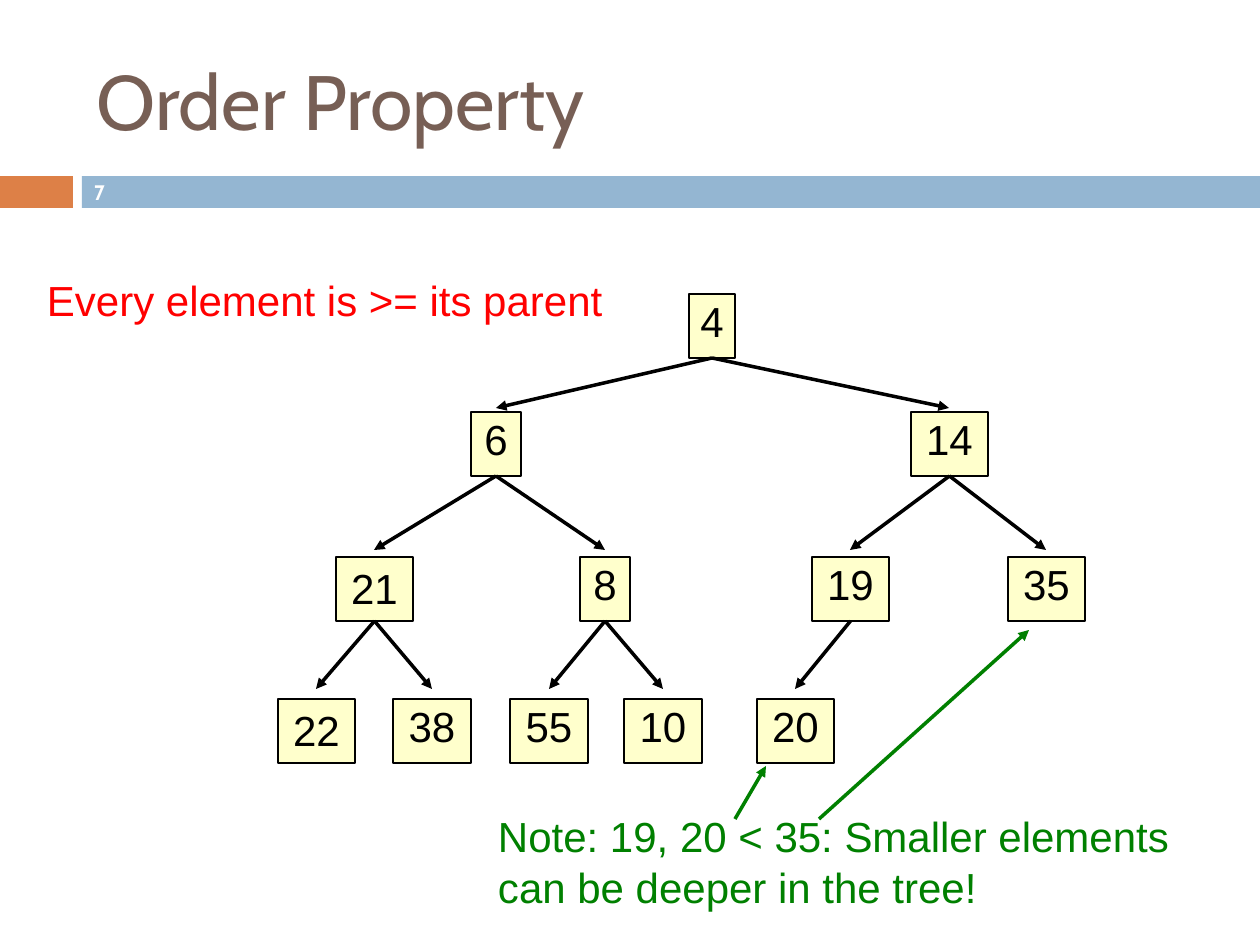
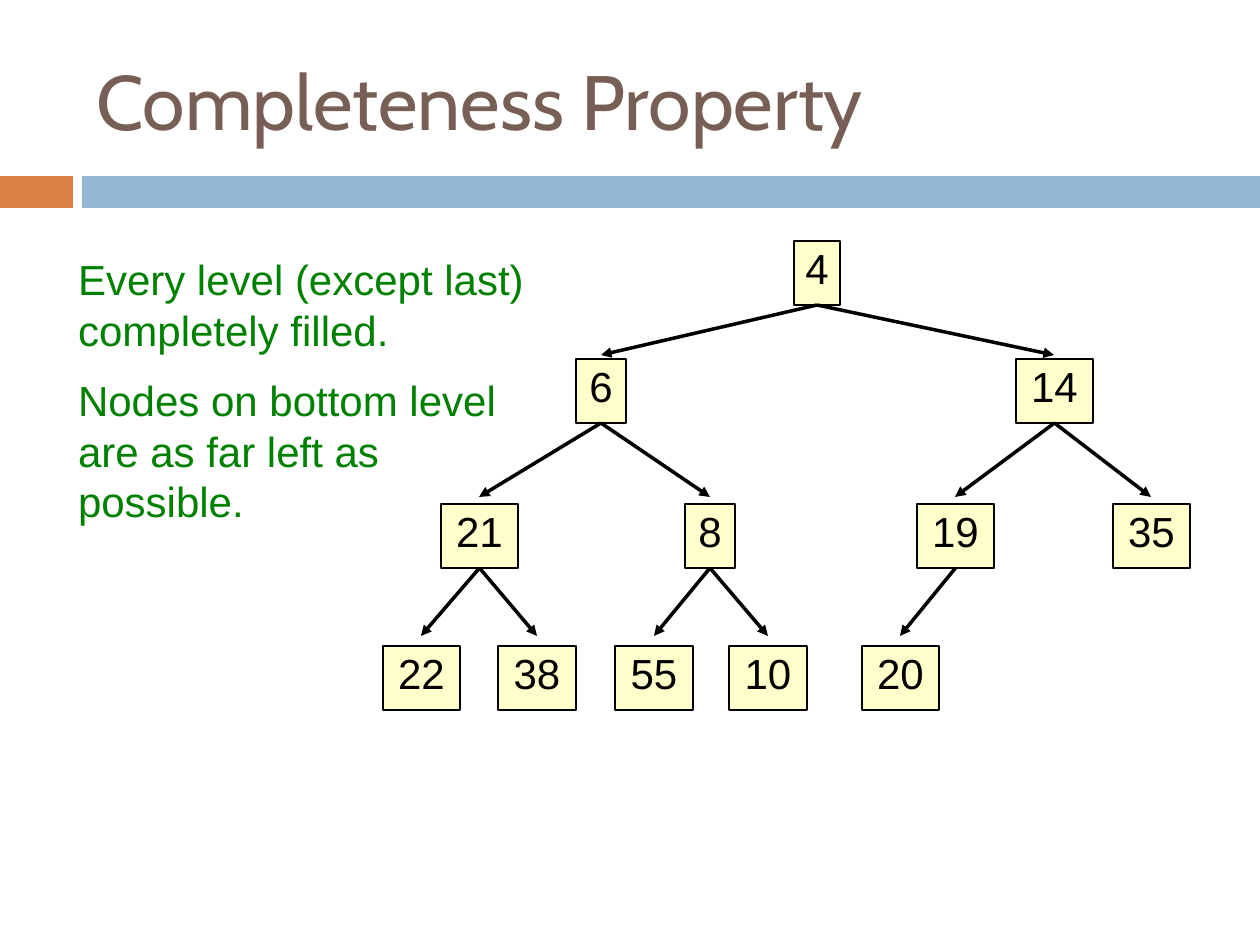
from lxml import etree
from pptx import Presentation
from pptx.dml.color import RGBColor
from pptx.enum.shapes import MSO_CONNECTOR, MSO_SHAPE
from pptx.enum.text import MSO_ANCHOR, MSO_AUTO_SIZE, PP_ALIGN
from pptx.oxml.ns import qn
from pptx.util import Inches, Pt

RECTANGLE = MSO_SHAPE.RECTANGLE
STRAIGHT = MSO_CONNECTOR.STRAIGHT
TOP, MIDDLE = MSO_ANCHOR.TOP, MSO_ANCHOR.MIDDLE
LEFT, CENTER = PP_ALIGN.LEFT, PP_ALIGN.CENTER
NO_AUTOFIT = MSO_AUTO_SIZE.NONE
BOTTOM_SITE = 2

BLACK = RGBColor(0x00, 0x00, 0x00)
WHITE = RGBColor(0xFF, 0xFF, 0xFF)
RED = RGBColor(0xFF, 0x00, 0x00)
GREEN = RGBColor(0x00, 0x80, 0x00)
CREAM = RGBColor(0xFF, 0xFF, 0xCC)
BROWN = RGBColor(0x77, 0x5F, 0x55)
ORANGE = RGBColor(0xDD, 0x80, 0x47)
BLUE = RGBColor(0x94, 0xB6, 0xD2)

PX_PER_INCH = 126
BODY_FONT, TITLE_FONT = "Arial", "Cabin"

# Tree levels: top of the nodes, and where arrows into them stop
NODE_TOPS = (294, 412, 557, 699)
ARROW_ENDS = (None, 408, 550, 689)
NODE_HEIGHT = 64

# Label: (level, left, width, parent)
TREE = {
    "4": (0, 689, 46, None),
    "6": (1, 471, 50, "4"),
    "14": (1, 911, 77, "4"),
    "21": (2, 336, 77, "6"),
    "8": (2, 580, 50, "6"),
    "19": (2, 812, 77, "14"),
    "35": (2, 1008, 77, "14"),
    "22": (3, 278, 77, "21"),
    "38": (3, 393, 78, "21"),
    "55": (3, 510, 78, "8"),
    "10": (3, 624, 78, "8"),
    "20": (3, 757, 77, "19"),
}


def emu(px):
    return round(px * Inches(1) / PX_PER_INCH)


class TreeDeck:
    """Holds the shared style and the current slide."""

    def __init__(self):
        self.deck = Presentation()
        self.deck.slide_width, self.deck.slide_height = Inches(10), Inches(7.5)
        self.page = None

    def start_page(self, title):
        self.page = self.deck.slides.add_slide(self.deck.slide_layouts[5])
        self.rectangle(0, 176, 73, 32, ORANGE)
        self.rectangle(82, 176, 1178, 32, BLUE)
        box = self.page.shapes.title
        box.left, box.top, box.width, box.height = map(emu, (84, 32, 1124, 136))
        frame = box.text_frame
        frame.auto_size = NO_AUTOFIT
        frame.vertical_anchor = MIDDLE
        frame.text = title
        self.format(frame.paragraphs[0], 44, BROWN, TITLE_FONT)

    def format(self, para, size, color, name=BODY_FONT, align=LEFT, bold=False):
        para.alignment = align
        font = para.font
        font.size, font.name, font.bold = Pt(size), name, bold
        font.color.rgb = color

    def body_text(self, frame, paragraphs, color, align=LEFT, inset_top=2):
        frame.word_wrap = True
        frame.vertical_anchor = TOP
        frame.margin_left = frame.margin_right = emu(5)
        frame.margin_top, frame.margin_bottom = emu(inset_top), 0
        for index, text in enumerate(paragraphs):
            para = frame.add_paragraph() if index else frame.paragraphs[0]
            para.text = text
            para.line_spacing = Pt(28.8)
            if index:
                para.space_before = Pt(11.5)
            self.format(para, 24, color, align=align)

    def rectangle(self, left, top, width, height, fill, line=None):
        box = self.page.shapes.add_shape(
            RECTANGLE, *map(emu, (left, top, width, height)))
        box.shadow.inherit = False
        box.fill.solid()
        box.fill.fore_color.rgb = fill
        if line is None:
            box.line.fill.background()
        else:
            box.line.color.rgb = line
            box.line.width = Pt(1)
        return box

    def text(self, left, top, width, height, paragraphs, color):
        box = self.page.shapes.add_textbox(*map(emu, (left, top, width, height)))
        self.body_text(box.text_frame, paragraphs, color)

    def page_number(self, number):
        box = self.page.shapes.add_textbox(*map(emu, (63, 175, 73, 34)))
        frame = box.text_frame
        frame.word_wrap = True
        frame.vertical_anchor = MIDDLE
        frame.text = number
        self.format(frame.paragraphs[0], 12, WHITE, TITLE_FONT, CENTER, True)

    def arrow(self, start_x, start_y, end_x, end_y, color, parent=None):
        line = self.page.shapes.add_connector(
            STRAIGHT, *map(emu, (start_x, start_y, end_x, end_y)))
        if parent is not None:
            line.begin_connect(parent, BOTTOM_SITE)
        line.line.color.rgb = color
        line.line.width = Pt(2)
        outline = line.line._get_or_add_ln()
        etree.SubElement(outline, qn("a:tailEnd"), type="triangle")
        etree.SubElement(line._element.spPr, qn("a:effectLst"))

    def tree(self, shift_x=0, shift_y=0, lowered=()):
        boxes = {}
        for label, (level, left, width, _) in TREE.items():
            box = self.rectangle(left + shift_x, NODE_TOPS[level] + shift_y,
                                 width, NODE_HEIGHT, CREAM, BLACK)
            self.body_text(box.text_frame, [label], BLACK, CENTER,
                           6 if label in lowered else 2)
            boxes[label] = box
        for level, left, width, parent in TREE.values():
            if parent is None:
                continue
            parent_level, parent_left, parent_width, _ = TREE[parent]
            self.arrow(parent_left + parent_width // 2 + shift_x,
                       NODE_TOPS[parent_level] + NODE_HEIGHT + shift_y,
                       left + width // 2 + shift_x,
                       ARROW_ENDS[level] + shift_y, BLACK, boxes[parent])


def main():
    slides = TreeDeck()

    # Order: every child is at least its parent
    slides.start_page("Order Property")
    slides.tree(lowered=("21", "22"))
    slides.text(42, 273, 580, 50, ["Every element is >= its parent"], RED)
    slides.text(493, 809, 700, 102,
                ["Note: 19, 20 < 35: Smaller elements\vcan be deeper in the tree!"],
                GREEN)
    slides.arrow(735, 819, 766, 766, GREEN)
    slides.arrow(819, 819, 1029, 630, GREEN)
    slides.page_number("7")

    # Completeness: the same tree, moved right and up
    slides.start_page("Completeness Property")
    slides.tree(shift_x=105, shift_y=-53)
    slides.text(73, 252, 483, 275,
                ["Every level (except last) completely filled.",
                 "Nodes on bottom level are as far left as possible."], GREEN)

    slides.deck.save("out.pptx")


if __name__ == "__main__":
    main()
